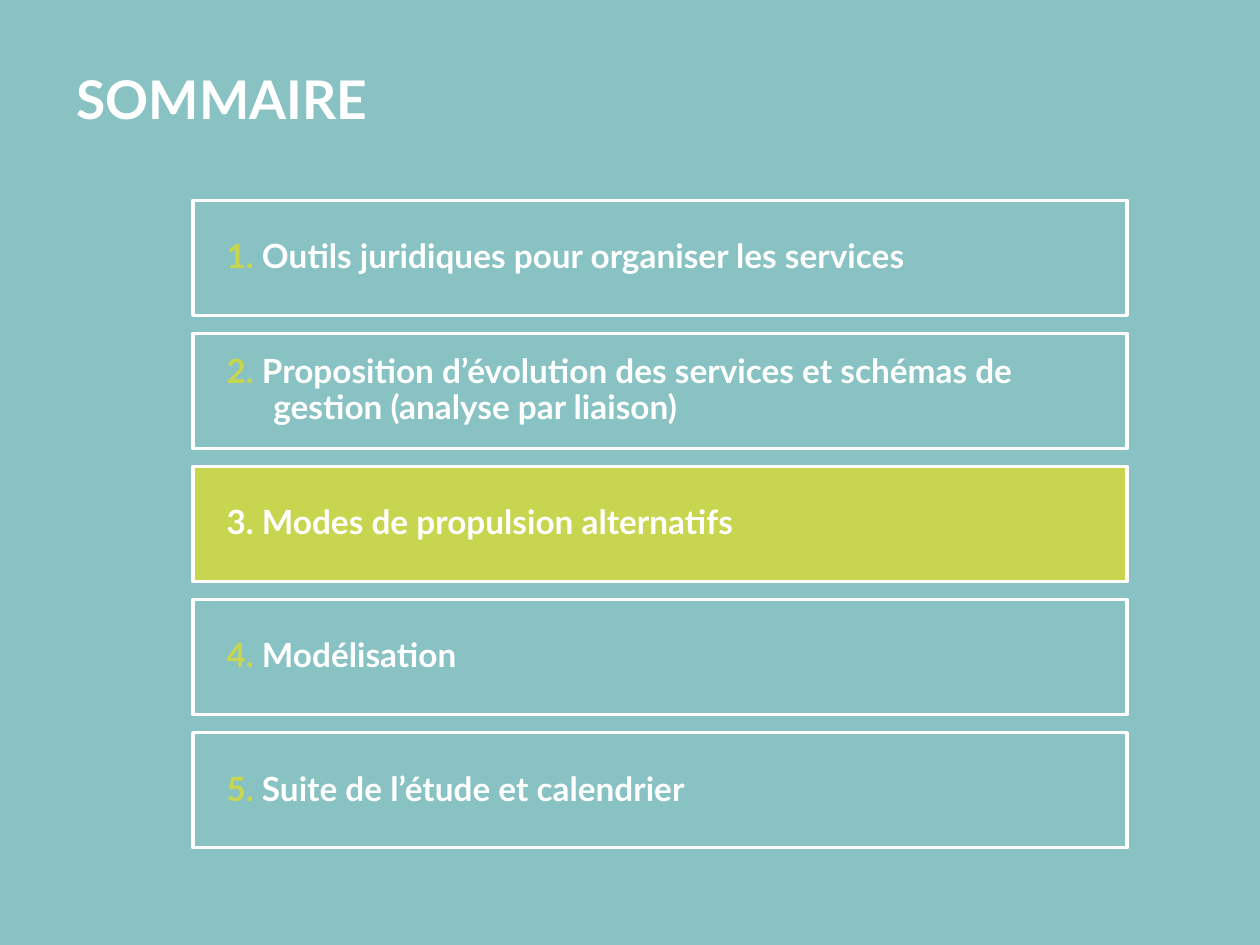
"""Build the SOMMAIRE slide: five numbered agenda boxes, the third highlighted."""
from pptx import Presentation, util as u
from pptx.dml.color import RGBColor
from pptx.enum import shapes, text

TEAL = RGBColor(0x88, 0xC2, 0xC3)
LIME = RGBColor(0xC8, 0xD5, 0x4F)
WHITE = RGBColor(0xFF, 0xFF, 0xFF)

LEFT, TOP, WIDTH, HEIGHT, PITCH = 1.61, 1.67, 7.79, 0.96, 1.11
CURRENT = 3
SECTIONS = [
    "Outils juridiques pour organiser les services",
    "Proposition d’évolution des services et schémas de gestion (analyse par liaison)",
    "Modes de propulsion alternatifs",
    "Modélisation",
    "Suite de l’étude et calendrier",
]


def add_run(p, words, size, color):
    r = p.add_run()
    r.text = words
    r.font.name = "Lato"
    r.font.size = u.Pt(size)
    r.font.bold = True
    r.font.color.rgb = color


prs = Presentation()
prs.slide_width, prs.slide_height = u.Inches(10.51), u.Inches(7.88)
s = prs.slides.add_slide(prs.slide_layouts[6])
s.background.fill.solid()
s.background.fill.fore_color.rgb = TEAL

title = s.shapes.add_textbox(u.Inches(0.53), u.Inches(0.49), u.Inches(9.83), u.Inches(0.71))
tf = title.text_frame
tf.word_wrap = True
tf.margin_left = tf.margin_right = u.Inches(0.11)
tf.margin_top = tf.margin_bottom = u.Inches(0.06)
add_run(tf.paragraphs[0], "SOMMAIRE", 32, WHITE)

for number, section in enumerate(SECTIONS, 1):
    top = TOP + (number - 1) * PITCH
    sp = s.shapes.add_shape(shapes.MSO_SHAPE.RECTANGLE, u.Inches(LEFT), u.Inches(top),
                            u.Inches(WIDTH), u.Inches(HEIGHT))
    sp.shadow.inherit = False
    sp.line.color.rgb = WHITE
    sp.line.width = u.Pt(2)
    if number == CURRENT:
        sp.fill.solid()
        sp.fill.fore_color.rgb = LIME
    else:
        sp.fill.background()

    tf = sp.text_frame
    tf.word_wrap = True
    tf.vertical_anchor = text.MSO_ANCHOR.MIDDLE
    tf.margin_left = tf.margin_right = tf.margin_top = tf.margin_bottom = u.Inches(0.08)
    p = tf.paragraphs[0]
    p.alignment = text.PP_ALIGN.LEFT
    p.line_spacing = 0.9
    p.space_after = u.Pt(4)
    pPr = p._p.get_or_add_pPr()
    pPr.set("marL", str(u.Inches(0.59)))
    pPr.set("indent", str(u.Inches(-0.39)))
    add_run(p, f"{number}. ", 20, WHITE if number == CURRENT else LIME)
    add_run(p, section, 20, WHITE)

prs.save("out.pptx")
